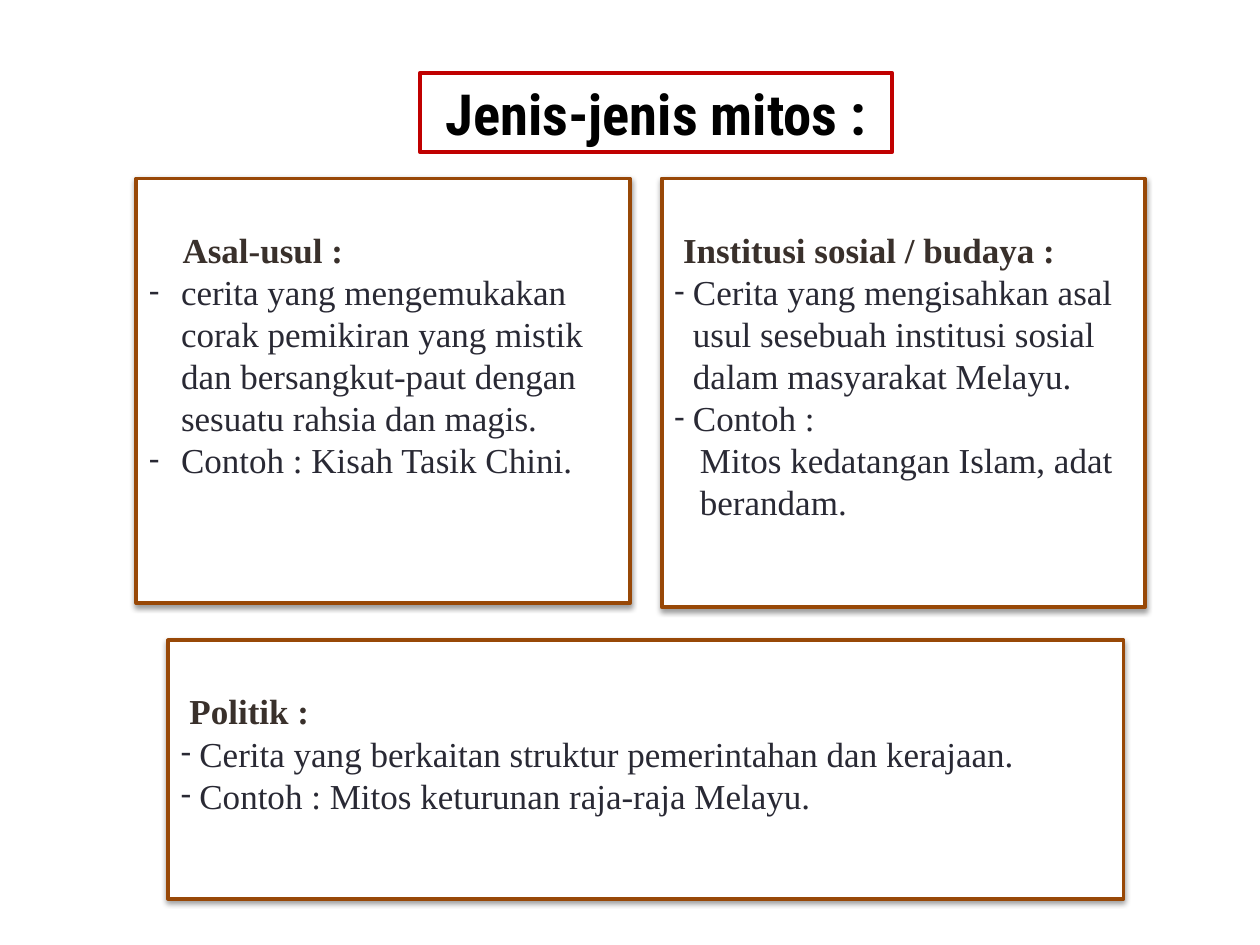
import lxml.etree
import pptx
import pptx.dml.color
import pptx.enum.shapes
import pptx.enum.text
import pptx.oxml
import pptx.oxml.ns
import pptx.util

Cm = pptx.util.Cm
Pt = pptx.util.Pt
qn = pptx.oxml.ns.qn

INK = "292934"
HEADING = "39302B"
BROWN = "984807"


def rgb(value):
    """Turn a hex string into a colour."""
    return pptx.dml.color.RGBColor.from_string(value)


def add_frame(slide, box, line, fill=None):
    """Add an outlined rectangle in a box of left, top, width, height in cm."""
    frame = slide.shapes.add_shape(
        pptx.enum.shapes.MSO_SHAPE.RECTANGLE, *[Cm(length) for length in box]
    )
    frame.shadow.inherit = False
    if fill:
        frame.fill.solid()
        frame.fill.fore_color.rgb = rgb(fill)
    else:
        frame.fill.background()
    frame.line.color.rgb = rgb(line)
    frame.line.width = Pt(2.25)
    frame.text_frame.word_wrap = True
    return frame


def cast_shadow(frame):
    """Give a frame a soft shadow straight below it."""
    effects = frame._element.spPr.find(qn("a:effectLst"))
    shadow = lxml.etree.SubElement(
        effects, qn("a:outerShdw"), blurRad="40000", dist="20000", dir="5400000", rotWithShape="0"
    )
    black = lxml.etree.SubElement(shadow, qn("a:srgbClr"), val="000000")
    lxml.etree.SubElement(black, qn("a:alpha"), val="38000")


def write(frame, text, font="Times New Roman", size=20, color=INK, bold=False,
          align="LEFT", indent=0, bullet=False, leading=None):
    """Write one paragraph, using the empty first one if there is one."""
    body = frame.text_frame
    paragraph = body.add_paragraph() if body.text else body.paragraphs[0]
    paragraph.alignment = getattr(pptx.enum.text.PP_ALIGN, align)
    if leading:
        paragraph.line_spacing = Pt(leading)
    run = paragraph.add_run()
    run.text = text
    run.font.name = font
    run.font.size = Pt(size)
    run.font.bold = bold
    run.font.color.rgb = rgb(color)
    properties = paragraph._p.get_or_add_pPr()
    properties.set("marL", str(Cm(indent)))
    properties.set("indent", str(-Cm(indent) if bullet else 0))
    if bullet:
        lxml.etree.SubElement(properties, qn("a:buFont"), typeface="Calibri")
        lxml.etree.SubElement(properties, qn("a:buChar"), char="-")


def add_title(slide, box, text):
    """Add the slide title in a red frame."""
    title = add_frame(slide, box, "C00000")
    title.text_frame.vertical_anchor = pptx.enum.text.MSO_ANCHOR.MIDDLE
    write(title, text, font="Roboto Condensed", size=32.4, color="000000", bold=True, align="CENTER")


def add_myth_card(slide, box, heading, points, heading_indent, point_indent, example=None):
    """Add a card with a heading, dashed points and an optional example below them."""
    card = add_frame(slide, box, BROWN, fill="FFFFFF")
    cast_shadow(card)
    card.text_frame.vertical_anchor = pptx.enum.text.MSO_ANCHOR.TOP
    card.text_frame.margin_top = Cm(1)
    write(card, heading, color=HEADING, bold=True, indent=heading_indent, leading=24)
    for point in points:
        write(card, point, indent=point_indent, bullet=True, leading=24)
    if example:
        write(card, example, indent=0.52, leading=24)


def main():
    """Build the slide and save it."""
    deck = pptx.Presentation()
    deck.slide_width, deck.slide_height = Cm(25.4), Cm(19.05)
    slide = deck.slides.add_slide(deck.slide_layouts[6])
    add_title(slide, (8.46, 1.48, 9.53, 1.58), "Jenis-jenis mitos :")
    add_myth_card(
        slide, (2.75, 3.6, 9.95, 8.56), "Asal-usul :",
        ["cerita yang mengemukakan corak pemikiran yang mistik dan bersangkut-paut "
         "dengan sesuatu rahsia dan magis.",
         "Contoh : Kisah Tasik Chini."],
        heading_indent=0.68, point_indent=0.65,
    )
    add_myth_card(
        slide, (13.34, 3.6, 9.74, 8.64), "Institusi sosial / budaya :",
        ["Cerita yang mengisahkan asal usul sesebuah institusi sosial dalam masyarakat Melayu.",
         "Contoh :"],
        heading_indent=0.18, point_indent=0.38,
        example="Mitos kedatangan Islam, adat berandam.",
    )
    add_myth_card(
        slide, (3.39, 12.91, 19.26, 5.21), "Politik :",
        ["Cerita yang berkaitan struktur pemerintahan dan kerajaan.",
         "Contoh : Mitos keturunan raja-raja Melayu."],
        heading_indent=0.18, point_indent=0.38,
    )
    deck.save("out.pptx")


if __name__ == "__main__":
    main()
